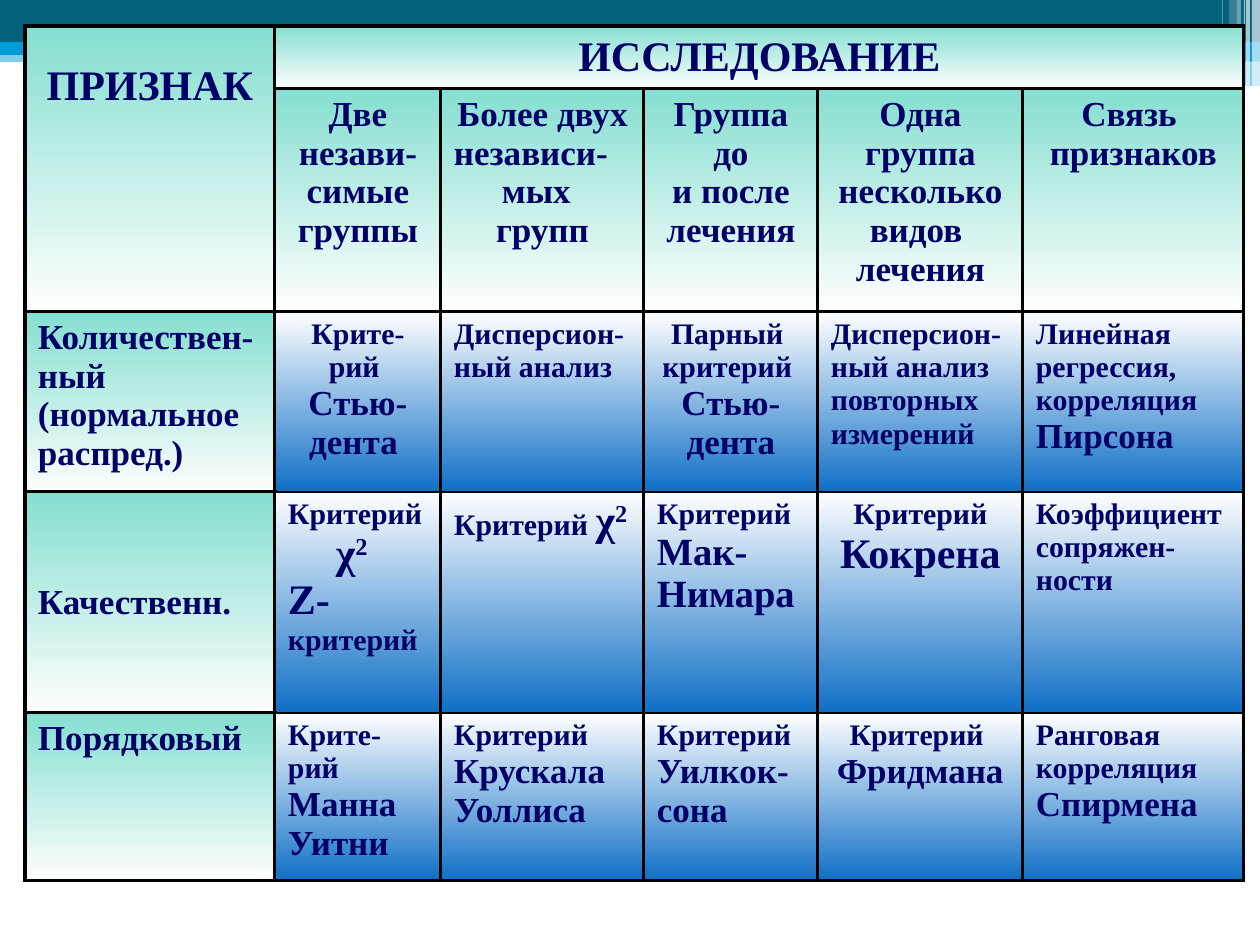
from functools import partial

from lxml.etree import SubElement
from pptx import Presentation
from pptx.dml.color import RGBColor
from pptx.enum.shapes import MSO_SHAPE
from pptx.enum.text import MSO_ANCHOR, PP_ALIGN
from pptx.oxml.ns import qn
from pptx.util import Pt

PX = 7257  # EMU per pixel at 126 px to the inch
INK, BLACK, WHITE = "000066", "000000", "FFFFFF"
TEAL, SKY, MINT, BLUE = "04617B", "009DD9", "85DFD0", "0F6FC6"
HEAD_FILL, LABEL_FILL, METHOD_FILL = (MINT, WHITE), (MINT, "FDFEFE"), (WHITE, BLUE)


def rgb(value):
    return RGBColor.from_string(value)


def px(value):
    return value * PX


def lines(size, *texts, align=PP_ALIGN.LEFT):
    """One paragraph per text; a run is (text, size, superscript)."""
    return [(align, [(text, size, False)]) for text in texts]


centred = partial(lines, align=PP_ALIGN.CENTER)
chi_square = [(PP_ALIGN.LEFT, [("Критерий ", 17, False), ("χ", 24, False), ("2", 24, True)])]


class SlideBuilder:
    font_style = {"name": "Times New Roman", "bold": True}
    hanging = 48
    cell_margins = {"margin_left": px(13), "margin_right": px(13),
                    "margin_top": px(6), "margin_bottom": px(6)}

    def __init__(self, slide):
        self.slide = slide

    def bar(self, x, y, width, height, color, alpha=100, kind=MSO_SHAPE.RECTANGLE):
        strip = self.slide.shapes.add_shape(kind, px(x), px(y), px(width), px(height))
        strip.shadow.inherit = False
        strip.line.fill.background()
        strip.fill.solid()
        strip.fill.fore_color.rgb = rgb(color)
        if alpha < 100:
            tone = strip.fill._xPr.find(".//" + qn("a:srgbClr"))
            SubElement(tone, qn("a:alpha"), val=str(alpha * 1000))

    def table(self, x, y, widths, heights):
        grid = self.slide.shapes.add_table(
            len(heights), len(widths), px(x), px(y), px(sum(widths)), px(sum(heights))).table
        grid.first_row = grid.horz_banding = False
        for column, width in zip(grid.columns, widths):
            column.width = px(width)
        for row, height in zip(grid.rows, heights):
            row.height = px(height)
        return grid

    def borders(self, cell, top=2, bottom=2):
        properties = cell._tc.get_or_add_tcPr()
        for side, width in {"L": 2, "R": 2, "T": top, "B": bottom}.items():
            edge = SubElement(properties, qn("a:ln" + side), w=str(Pt(width)))
            SubElement(SubElement(edge, qn("a:solidFill")), qn("a:srgbClr"), val=BLACK)

    def cell(self, cell, paragraphs, colors, **layout):
        for name, value in {**self.cell_margins, **layout}.items():
            setattr(cell, name, value)
        cell.fill.gradient()
        cell.fill.gradient_angle = 270  # top to bottom
        for stop, color in zip(cell.fill.gradient_stops, colors):
            stop.color.rgb = rgb(color)
        for index, (align, runs) in enumerate(paragraphs):
            frame = cell.text_frame
            paragraph = frame.add_paragraph() if index else frame.paragraphs[0]
            paragraph.alignment = align
            indent = paragraph._p.get_or_add_pPr()
            indent.set("marL", str(px(self.hanging)))
            indent.set("indent", str(-px(self.hanging)))
            for text, size, superscript in runs:
                self.run(paragraph, text, size, superscript)

    def run(self, paragraph, text, size, superscript):
        run = paragraph.add_run()
        run.text = text
        for name, value in {**self.font_style, "size": Pt(size)}.items():
            setattr(run.font, name, value)
        run.font.color.rgb = rgb(INK)
        if superscript:
            run.font._element.set("baseline", "30000")


STUDIES = [
    centred(20, "Две", "незави-", "симые", "группы"),
    centred(20, "Более двух ") + lines(20, "независи-мых") + centred(20, "групп"),
    centred(20, "Группа", "до", "и после", "лечения"),
    centred(20, "Одна", "группа", "несколько", "видов ", "лечения"),
    centred(20, "Связь ", "признаков"),
]

# Each row: label, then one method per kind of study
METHODS = [
    [lines(20, "Количествен-", "ный", "(нормальное", "распред.)"),
     centred(17, "Крите-", "рий ") + centred(20, "Стью-", "дента "),
     lines(17, "Дисперсион-", "ный анализ"),
     centred(17, "Парный ", "критерий ") + centred(20, "Стью-", "дента"),
     lines(17, "Дисперсион-", "ный анализ", "повторных", "измерений"),
     lines(17, "Линейная", "регрессия,", "корреляция") + lines(20, "Пирсона")],
    [lines(20, "Качественн."),
     chi_square + lines(24, "Z-") + lines(17, "критерий"),
     chi_square,
     lines(17, "Критерий") + lines(22, "Мак-", "Нимара"),
     centred(17, "Критерий") + centred(24, "Кокрена"),
     lines(17, "Коэффициент", "сопряжен-", "ности")],
    [lines(20, "Порядковый"),
     lines(17, "Крите-", "рий") + lines(20, "Манна", "Уитни"),
     lines(17, "Критерий") + lines(20, "Крускала", "Уоллиса"),
     lines(17, "Критерий") + lines(20, "Уилкок-", "сона"),
     centred(17, "Критерий ") + centred(20, "Фридмана"),
     lines(17, "Ранговая", "корреляция") + lines(20, "Спирмена")],
]


def main():
    deck = Presentation()
    deck.slide_width, deck.slide_height = px(1260), px(945)
    builder = SlideBuilder(deck.slides.add_slide(deck.slide_layouts[6]))

    # Header bands
    builder.bar(0, 50, 1260, 12, SKY, 50)
    builder.bar(0, 0, 1260, 43, TEAL)
    builder.bar(0, 42, 1260, 13, SKY)
    builder.bar(746, 49, 514, 12, SKY)
    builder.bar(746, 61, 514, 25, SKY, 50)
    builder.bar(745, 68, 422, 4, WHITE, kind=MSO_SHAPE.ROUNDED_RECTANGLE)
    builder.bar(1016, 81, 220, 5, WHITE, kind=MSO_SHAPE.ROUNDED_RECTANGLE)

    # Light stripes in the corner
    for x, width, height, alpha in [(1252, 8, 86, 65), (1246, 4, 86, 65), (1244, 1, 86, 60),
                                    (1237, 4, 86, 40), (1229, 8, 81, 20), (1222, 1, 81, 30)]:
        builder.bar(x, 0, width, height, WHITE, alpha)

    # Table grid and borders
    grid = builder.table(25, 26, [250, 166, 203, 174, 205, 221], [63, 223, 180, 221, 168])
    last = len(grid.rows) - 1
    for row in range(len(grid.rows)):
        for column in range(len(grid.columns)):
            method = row >= 2 and column >= 1
            builder.borders(grid.cell(row, column),
                            top=1 if method and row > 2 else 2,
                            bottom=1 if method and row < last else 2)
    grid.cell(0, 0).merge(grid.cell(1, 0))
    grid.cell(0, 1).merge(grid.cell(0, 5))

    # Headings
    builder.cell(grid.cell(0, 0), centred(24, "ПРИЗНАК"), HEAD_FILL, margin_top=px(37))
    builder.cell(grid.cell(0, 1), centred(24, "ИССЛЕДОВАНИЕ"), HEAD_FILL,
                 vertical_anchor=MSO_ANCHOR.MIDDLE)
    for column, study in enumerate(STUDIES, 1):
        builder.cell(grid.cell(1, column), study, HEAD_FILL)

    # Labels and methods
    for row, (label, *methods) in enumerate(METHODS, 2):
        anchor = MSO_ANCHOR.MIDDLE if row == 3 else MSO_ANCHOR.TOP
        builder.cell(grid.cell(row, 0), label, LABEL_FILL, vertical_anchor=anchor)
        for column, method in enumerate(methods, 1):
            builder.cell(grid.cell(row, column), method, METHOD_FILL)

    deck.save("out.pptx")


if __name__ == "__main__":
    main()
